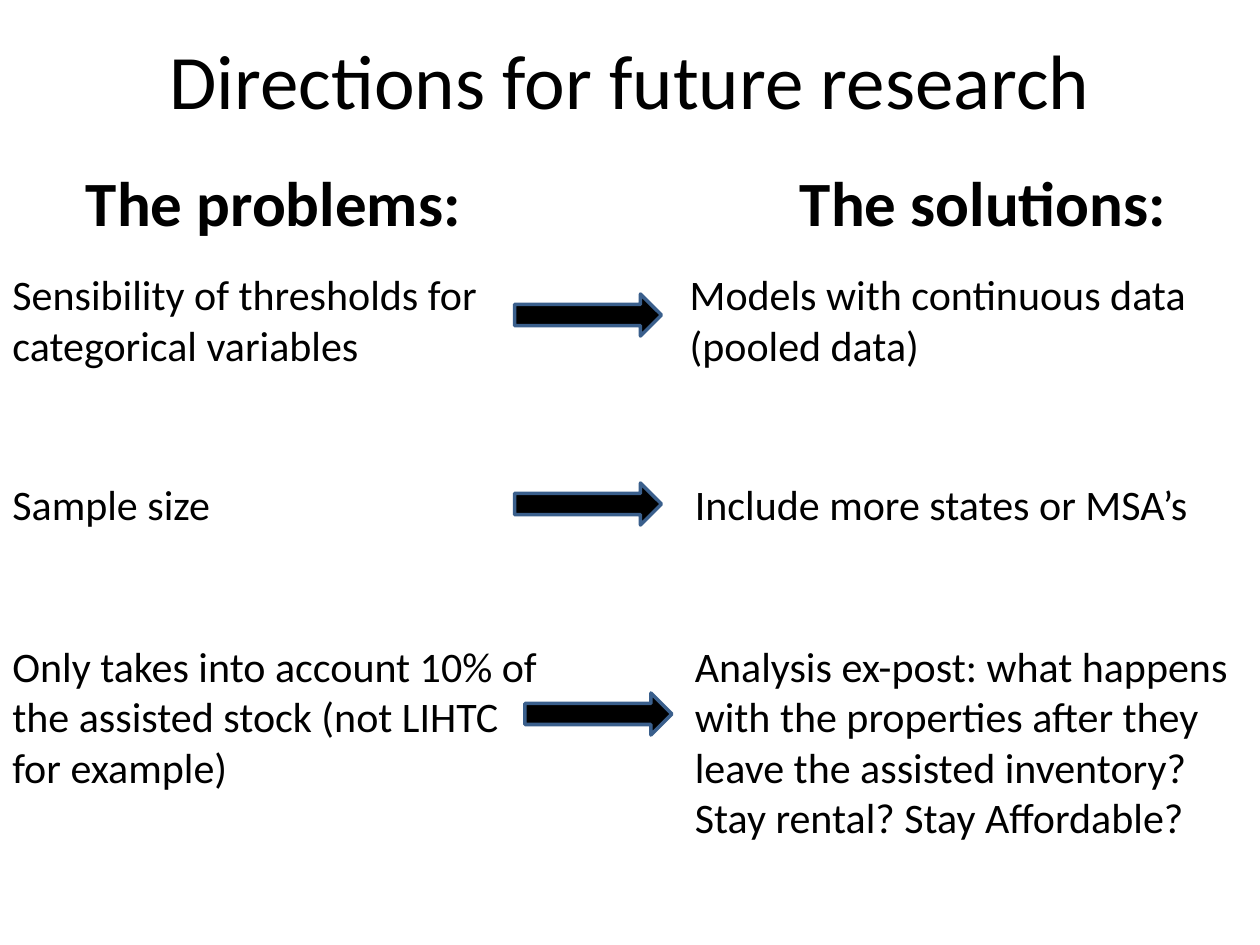
from dataclasses import dataclass

from pptx import Presentation
from pptx.dml.color import RGBColor
from pptx.enum.shapes import MSO_SHAPE
from pptx.enum.text import MSO_ANCHOR, MSO_AUTO_SIZE, PP_ALIGN
from pptx.util import Inches, Pt

# The slide is a grid of 120 columns and 90 rows
SLIDE_WIDTH, SLIDE_HEIGHT = Inches(10), Inches(7.5)
COLUMNS, ROWS = 120, 90
FONT = "Calibri"
BLACK, ARROW_EDGE = "000000", "3A5F8C"


@dataclass(frozen=True)
class Area:
    column: float
    row: float
    columns: float
    rows: float

    def lengths(self) -> tuple[int, int, int, int]:
        column_width, row_height = SLIDE_WIDTH / COLUMNS, SLIDE_HEIGHT / ROWS
        return (round(self.column * column_width), round(self.row * row_height),
                round(self.columns * column_width), round(self.rows * row_height))


@dataclass(frozen=True)
class Heading:
    text: str
    area: Area


@dataclass(frozen=True)
class Pair:
    problem: str
    problem_area: Area
    solution: str
    solution_area: Area
    arrow_area: Area


HEADINGS = [
    Heading("The problems:", Area(1, 15, 44.5, 8.5)),
    Heading("The solutions:", Area(69, 15, 43.8, 8.5)),
]

PAIRS = [
    Pair("Sensibility of thresholds for categorical variables", Area(0, 25, 52, 10.9),
         "Models with continuous data (pooled data)", Area(64.5, 25, 55.5, 10.9),
         Area(49, 28, 14, 4)),
    Pair("Sample size", Area(0, 45, 52, 6),
         "Include more states or MSA’s", Area(65, 45, 54, 6),
         Area(49, 46, 14, 4)),
    Pair("Only takes into account 10% of the assisted stock (not LIHTC for example)",
         Area(0, 60.4, 54, 15.7),
         "Analysis ex-post: what happens with the properties after they leave "
         "the assisted inventory? Stay rental? Stay Affordable?",
         Area(65, 60.4, 54, 20.6),
         Area(50, 66, 14, 4)),
]


def color(value: str) -> RGBColor:
    return RGBColor.from_string(value)


def place(shape, area: Area) -> None:
    shape.left, shape.top, shape.width, shape.height = area.lengths()


def write(frame, text: str, *, size: float, bold: bool = False, level: int = 0,
          align=PP_ALIGN.LEFT, anchor=MSO_ANCHOR.TOP, wrap: bool = True) -> None:
    frame.word_wrap = wrap
    frame.vertical_anchor = anchor
    paragraph = frame.paragraphs[0]
    paragraph.level = level
    paragraph.alignment = align
    run = paragraph.add_run()
    run.text = text
    run.font.name = FONT
    run.font.size = Pt(size)
    run.font.bold = bold
    run.font.color.rgb = color(BLACK)


def add_text(slide, text: str, area: Area, **text_format) -> None:
    frame = slide.shapes.add_textbox(*area.lengths()).text_frame
    write(frame, text, **text_format)
    frame.auto_size = MSO_AUTO_SIZE.SHAPE_TO_FIT_TEXT


def add_arrow(slide, area: Area) -> None:
    arrow = slide.shapes.add_shape(MSO_SHAPE.RIGHT_ARROW, *area.lengths())
    arrow.shadow.inherit = False
    arrow.fill.solid()
    arrow.fill.fore_color.rgb = color(BLACK)
    arrow.line.color.rgb = color(ARROW_EDGE)
    arrow.line.width = Pt(2)


def main() -> None:
    presentation = Presentation()
    presentation.slide_width, presentation.slide_height = SLIDE_WIDTH, SLIDE_HEIGHT
    slide = presentation.slides.add_slide(presentation.slide_layouts.get_by_name("Title Only"))

    # Title
    title = slide.shapes.title
    place(title, Area(6, 0, 108, 15))
    write(title.text_frame, "Directions for future research", size=44,
          align=PP_ALIGN.CENTER, anchor=MSO_ANCHOR.MIDDLE)

    # Column headings
    for heading in HEADINGS:
        add_text(slide, heading.text, heading.area, size=36, bold=True, level=1, wrap=False)

    # Each problem with an arrow to its solution
    for pair in PAIRS:
        add_text(slide, pair.problem, pair.problem_area, size=24)
        add_text(slide, pair.solution, pair.solution_area, size=24)
        add_arrow(slide, pair.arrow_area)

    presentation.save("out.pptx")


if __name__ == "__main__":
    main()
